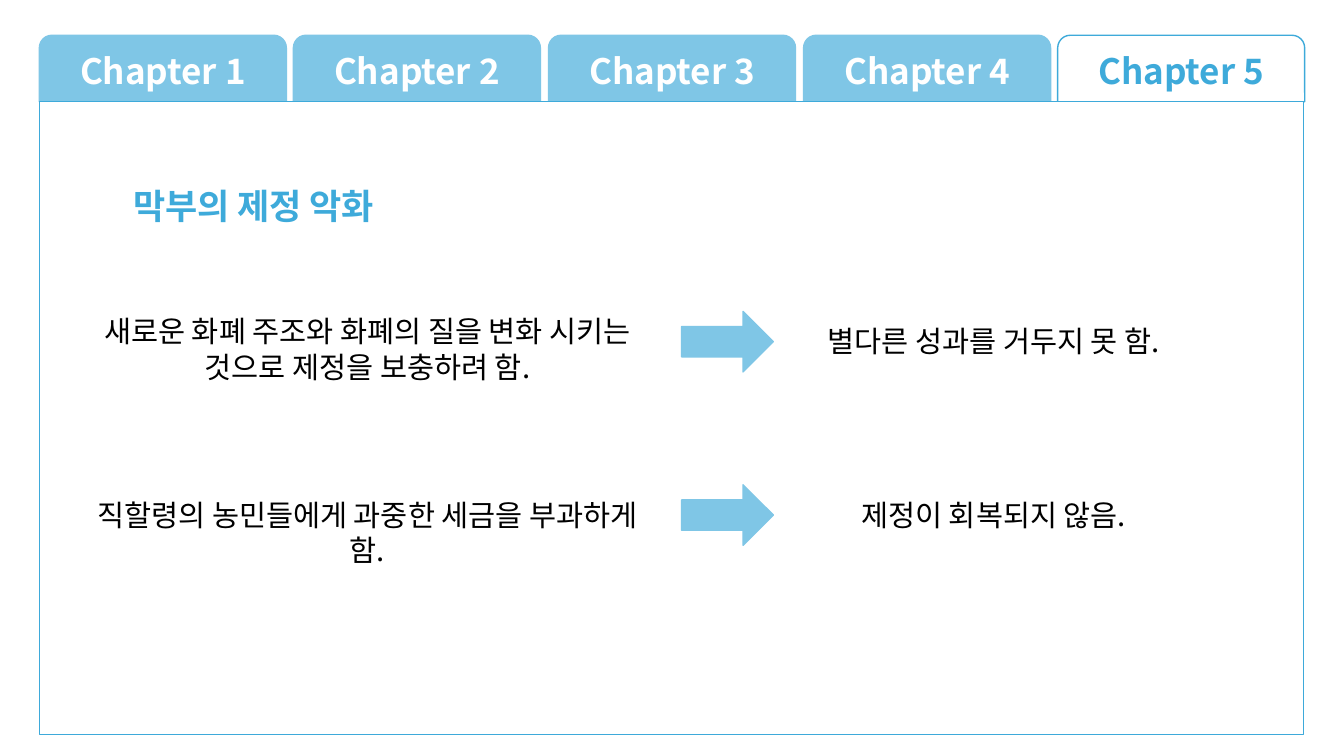
from lxml.etree import SubElement
from pptx import Presentation
from pptx.dml.color import RGBColor
from pptx.enum.shapes import MSO_SHAPE as Preset
from pptx.enum.text import MSO_ANCHOR as Anchor, MSO_AUTO_SIZE as AutoSize, PP_ALIGN as Align
from pptx.oxml.ns import qn
from pptx.util import Pt

PX = 9144
FONT = "Noto Sans CJK KR"
COLORS = {"sky": "7FC6E6", "blue": "3EAADA", "white": "FFFFFF", "black": "000000"}
CHAPTERS = ["Chapter 1", "Chapter 2", "Chapter 3", "Chapter 4", "Chapter 5"]
HEADING = "막부의 제정 악화"
MEASURES = [
    (306, "새로운 화폐 주조와 화폐의 질을 변화 시키는 것으로 제정을 보충하려 함.", 81,
     316, "별다른 성과를 거두지 못 함."),
    (488, "직할령의 농민들에게 과중한 세금을 부과하게 함.", 81,
     488, "제정이 회복되지 않음."),
]
ARROW_TOPS = [309, 481]


def color(name):
    return RGBColor.from_string(COLORS[name])


def emu(box):
    return [length * PX for length in box]


def write(frame, text, size, ink, bold=False, anchor=Anchor.TOP):
    frame.word_wrap = True
    frame.vertical_anchor = anchor
    paragraph = frame.paragraphs[0]
    paragraph.alignment = Align.CENTER
    run = paragraph.add_run()
    run.text = text
    run.font.size = Pt(size)
    run.font.bold = bold
    run.font.name = FONT
    run.font.color.rgb = color(ink)
    SubElement(run._r.get_or_add_rPr(), qn("a:ea"), typeface=FONT)


def add_block(slide, preset, box, fill, outline):
    block = slide.shapes.add_shape(preset, *emu(box))
    block.shadow.inherit = False
    block.fill.solid()
    block.fill.fore_color.rgb = color(fill)
    block.line.color.rgb = color(outline)
    block.line.width = Pt(1)
    return block


def add_tabs(slide, box, current):
    left, top, width, height = box
    tab_width = 245
    step = (width - tab_width) / (len(CHAPTERS) - 1)
    for index, chapter in enumerate(CHAPTERS):
        fill, ink = ("white", "blue") if chapter == current else ("sky", "white")
        outline = "blue" if chapter == current else "sky"
        tab_box = (left + round(index * step), top, tab_width, height)
        tab = add_block(slide, Preset.ROUND_2_SAME_RECTANGLE, tab_box, fill, outline)
        tab.adjustments[0] = 0.19
        write(tab.text_frame, chapter, 25, ink, True, Anchor.MIDDLE)


def add_heading(slide, box):
    heading = slide.shapes.title
    heading.left, heading.top, heading.width, heading.height = emu(box)
    heading.text_frame.auto_size = AutoSize.SHAPE_TO_FIT_TEXT
    write(heading.text_frame, HEADING, 25, "blue", True)
    slide.shapes._spTree.append(heading._element)


def add_statement(slide, box, text):
    frame = slide.shapes.add_textbox(*emu(box)).text_frame
    frame.auto_size = AutoSize.SHAPE_TO_FIT_TEXT
    write(frame, text, 21, "black")


def add_measures(slide, box):
    left, top, width, _ = box
    text_width = 559
    for (cause_top, cause, cause_height, result_top, result), arrow_top in zip(MEASURES, ARROW_TOPS):
        add_statement(slide, (left + 46, cause_top, text_width, cause_height), cause)
        add_statement(slide, (left + 667, result_top, text_width, 45), result)
        add_block(slide, Preset.RIGHT_ARROW, (left + 637, arrow_top, 91, 60), "sky", "sky")


def add_chapter_slide(deck):
    slide = deck.slides.add_slide(deck.slide_layouts.get_by_name("Title Only"))
    panel_box = (39, 101, 1254, 628)
    add_tabs(slide, (39, 35, 1255, 66), "Chapter 5")
    add_block(slide, Preset.RECTANGLE, panel_box, "white", "blue")
    add_heading(slide, (68, 178, 367, 52))
    add_measures(slide, panel_box)


def main():
    deck = Presentation()
    deck.slide_width, deck.slide_height = emu((1333, 750))
    add_chapter_slide(deck)
    deck.save("out.pptx")


if __name__ == "__main__":
    main()
